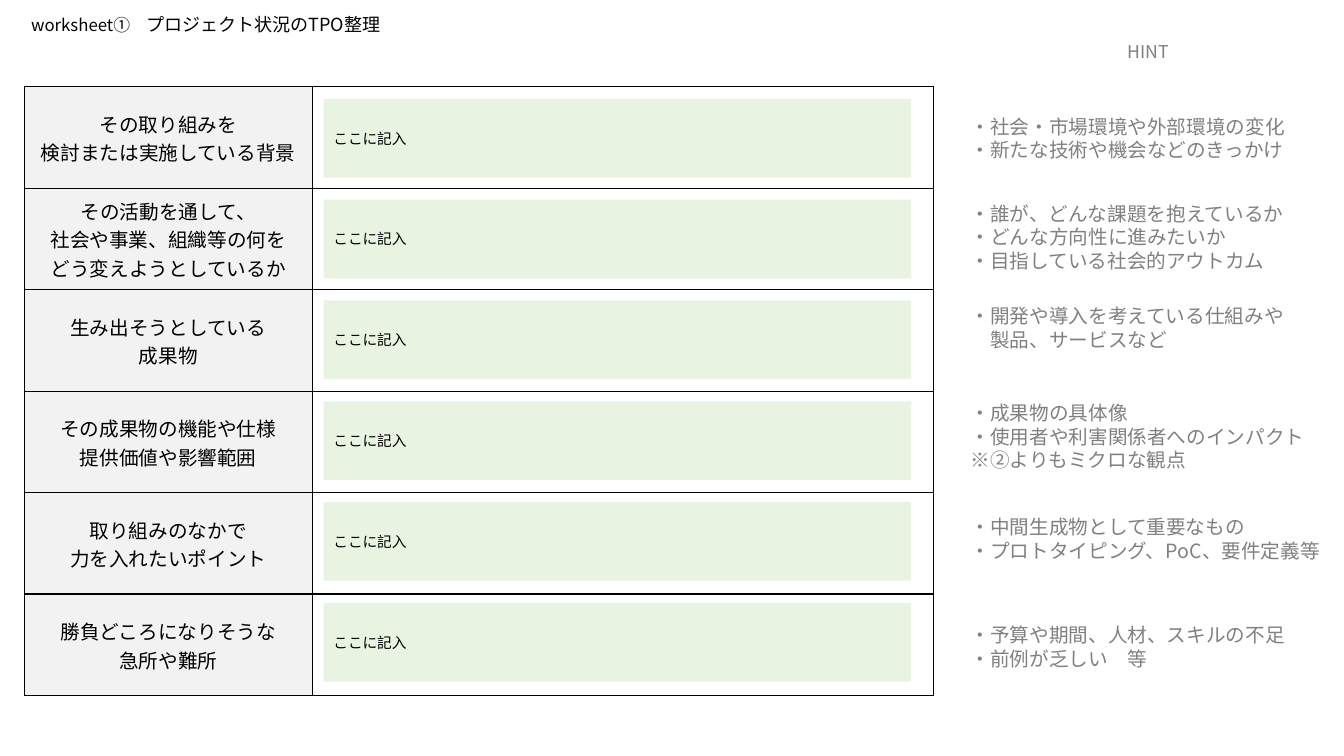
from lxml import etree
from pptx import Presentation
from pptx.dml.color import RGBColor
from pptx.enum.shapes import MSO_SHAPE
from pptx.enum.text import MSO_ANCHOR, MSO_AUTO_SIZE, PP_ALIGN
from pptx.oxml.ns import qn
from pptx.util import Pt

RECTANGLE = MSO_SHAPE.RECTANGLE
MIDDLE = MSO_ANCHOR.MIDDLE
GROW = MSO_AUTO_SIZE.SHAPE_TO_FIT_TEXT
LEFT, CENTER = PP_ALIGN.LEFT, PP_ALIGN.CENTER

FONT = "Noto Sans CJK JP"
BLACK, GRAY, WHITE = "000000", "808080", "FFFFFF"
LABEL_FILL, ENTRY_FILL = "F2F2F2", "E8F3E1"
LINE_HEIGHT = 1.2

TITLE = [("worksheet①　", 12), ("プロジェクト状況のTPO整理", 12.9)]
LABELS = [
    "その取り組みを\v検討または実施している背景",
    "その活動を通して、\v社会や事業、組織等の何を\nどう変えようとしているか",
    "生み出そうとしている\v成果物",
    "その成果物の機能や仕様\n提供価値や影響範囲",
    "取り組みのなかで\n力を入れたいポイント",
    "勝負どころになりそうな\n急所や難所",
]
HINTS = [
    (78.5, "・社会・市場環境や外部環境の変化\n・新たな技術や機会などのきっかけ　"),
    (140.4, "・誰が、どんな課題を抱えているか\n・どんな方向性に進みたいか\n・目指している社会的アウトカム"),
    (213.8, "・開発や導入を考えている仕組みや\n　製品、サービスなど"),
    (283, "・成果物の具体像\n・使用者や利害関係者へのインパクト\n※②よりもミクロな観点"),
    (364.3, "・中間生成物として重要なもの\n・プロトタイピング、PoC、要件定義等"),
    (441.4, "・予算や期間、人材、スキルの不足\n・前例が乏しい　等"),
]


def color(value):
    return RGBColor.from_string(value)


def style_text(frame, size, text_color, alignment=LEFT, line_height=None):
    for paragraph in frame.paragraphs:
        paragraph.alignment = alignment
        paragraph.font.size = Pt(size)
        paragraph.font.name = FONT
        paragraph.font.color.rgb = color(text_color)
        if line_height:
            paragraph.line_spacing = Pt(round(size * line_height, 1))
        defaults = paragraph._p.get_or_add_pPr().find(qn("a:defRPr"))
        etree.SubElement(defaults, qn("a:ea"), typeface=FONT)


def add_text_box(slide, left, top, width, height):
    frame = slide.shapes.add_textbox(Pt(left), Pt(top), Pt(width), Pt(height)).text_frame
    frame.word_wrap = True
    frame.auto_size = GROW
    return frame


def add_title(slide, left, top, width, height):
    frame = add_text_box(slide, left, top, width, height)
    frame.margin_left = frame.margin_right = Pt(5)
    frame.margin_top = frame.margin_bottom = Pt(2.9)
    for text, size in TITLE:
        run = frame.paragraphs[0].add_run()
        run.text = text
        run.font.size = Pt(size)
    style_text(frame, 12.9, BLACK, line_height=LINE_HEIGHT)


def set_borders(cell):
    properties = cell._tc.get_or_add_tcPr()
    for index, side in enumerate(("lnL", "lnR", "lnT", "lnB")):
        line = etree.Element(qn(f"a:{side}"), w=str(Pt(1)))
        fill = etree.SubElement(line, qn("a:solidFill"))
        etree.SubElement(fill, qn("a:srgbClr"), val=BLACK)
        properties.insert(index, line)


def add_worksheet(slide, left, top, width, height):
    label_width = 205.9
    table = slide.shapes.add_table(
        len(LABELS), 2, Pt(left), Pt(top), Pt(width), Pt(height)).table
    table.first_row = table.horz_banding = False
    table.columns[0].width = Pt(label_width)
    table.columns[1].width = Pt(width - label_width)
    for row, label in zip(table.rows, LABELS):
        row.height = Pt(height / len(LABELS))
        for cell, fill in zip(row.cells, (LABEL_FILL, WHITE)):
            cell.fill.solid()
            cell.fill.fore_color.rgb = color(fill)
            set_borders(cell)
        cell = row.cells[0]
        cell.vertical_anchor = MIDDLE
        cell.margin_left = cell.margin_right = cell.margin_top = Pt(0.7)
        cell.margin_bottom = 0
        cell.text_frame.text = label
        style_text(cell.text_frame, 14, BLACK, CENTER)


def add_entries(slide, left, top, width, height, pitch):
    for index in range(len(LABELS)):
        shape = slide.shapes.add_shape(
            RECTANGLE, Pt(left), Pt(top + index * pitch), Pt(width), Pt(height))
        shape.shadow.inherit = False
        shape.fill.solid()
        shape.fill.fore_color.rgb = color(ENTRY_FILL)
        shape.line.fill.background()
        frame = shape.text_frame
        frame.vertical_anchor = MIDDLE
        frame.text = "ここに記入"
        style_text(frame, 10.5, BLACK)


def add_hints(slide, left, top, width):
    heading = add_text_box(slide, left + 96.5, top, 74.9, 22.3)
    heading.text = "HINT"
    style_text(heading, 12.6, GRAY, CENTER, LINE_HEIGHT)
    for hint_top, text in HINTS:
        height = 7.2 + 16.8 * len(text.split("\n"))
        frame = add_text_box(slide, left, hint_top, width, height)
        frame.text = text
        style_text(frame, 14, GRAY, line_height=LINE_HEIGHT)


def main():
    presentation = Presentation()
    presentation.slide_width = Pt(960)
    presentation.slide_height = Pt(540)
    slide = presentation.slides.add_slide(presentation.slide_layouts[6])
    add_title(slide, 17.3, 6.5, 903.6, 20.9)
    add_worksheet(slide, 17.3, 61.9, 649.4, 434.9)
    add_hints(slide, 686.2, 25.9, 266.4)
    add_entries(slide, 231.1, 70.6, 419.8, 56.2, 72)
    presentation.save("out.pptx")


if __name__ == "__main__":
    main()
